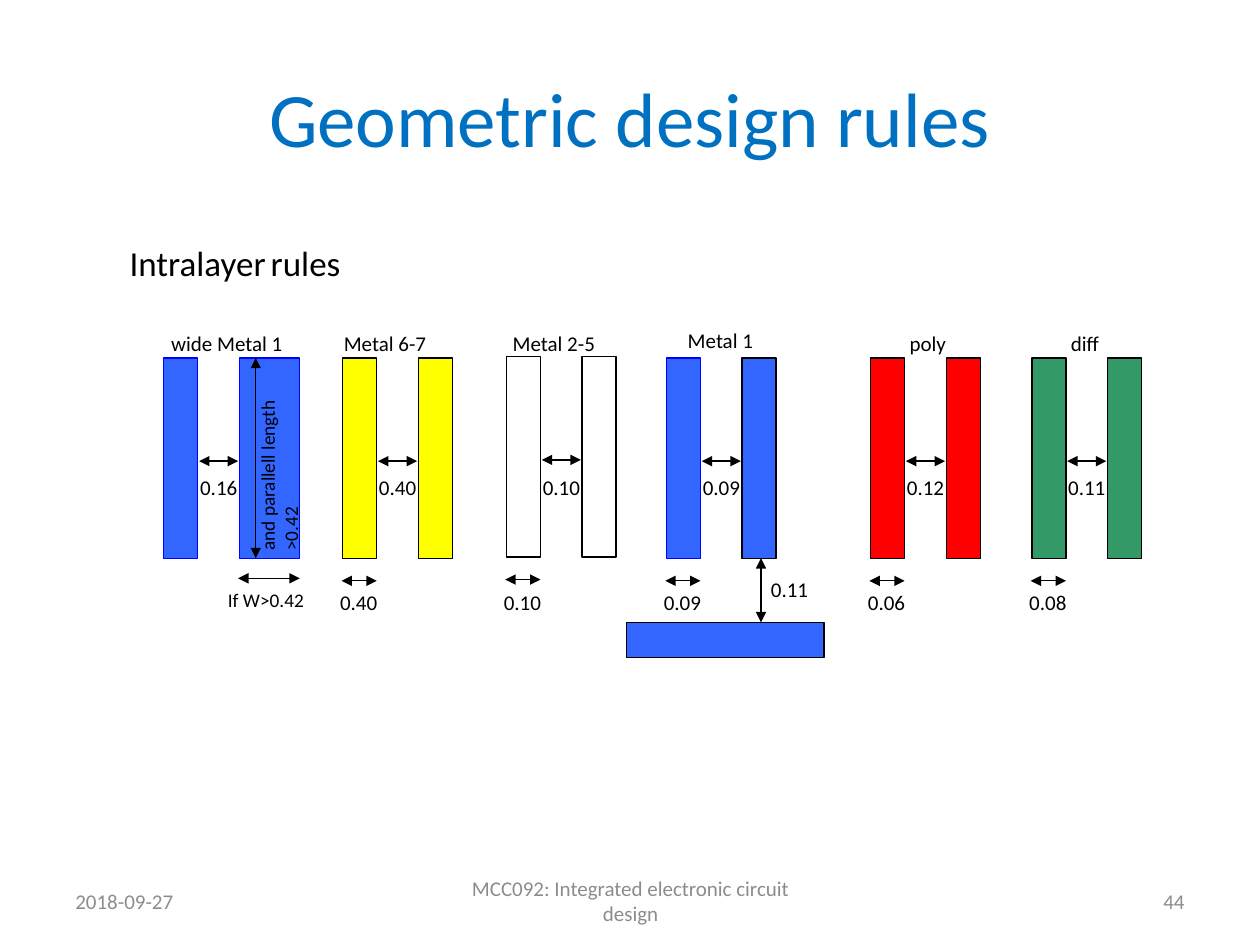
from dataclasses import dataclass

from lxml.etree import SubElement
from pptx import Presentation
from pptx.dml.color import RGBColor
from pptx.enum.shapes import MSO_CONNECTOR, MSO_SHAPE
from pptx.enum.text import MSO_ANCHOR, PP_ALIGN
from pptx.oxml.ns import qn
from pptx.util import Inches, Pt

COLORS = {
    "title": "0070C0",
    "footer": "8C8C8C",
    "black": "000000",
    "metal": "3366FF",
    "metal_edge": "0000FF",
    "yellow": "FFFF00",
    "white": "FFFFFF",
    "red": "FF0000",
    "green": "339966",
}
FONT = "Calibri"
BAR_WIDTH = 0.27
BAR_HEIGHT = 1.59
BAR_PITCH = 0.6


@dataclass
class Layer:
    """One mask layer with its spacing and width rules."""

    name: str
    left: float
    label_left: float
    fill: str
    spacing: str
    width: str = ""
    top: float = 2.84
    label_top: float = 2.57
    edges: tuple = ("black", "black")
    second_width: float = BAR_WIDTH


LAYERS = [
    Layer("wide Metal 1", 1.3, 1.26, "metal", "0.16",
          edges=("metal_edge", "metal_edge"), second_width=0.48),
    Layer("Metal 6-7", 2.72, 2.63, "yellow", "0.40", "0.40"),
    Layer("Metal 2-5", 4.02, 3.97, "white", "0.10", "0.10", top=2.83),
    Layer("Metal 1", 5.29, 5.36, "metal", "0.09", "0.09",
          label_top=2.55, edges=("metal_edge", "black")),
    Layer("poly", 6.91, 7.12, "red", "0.12", "0.06"),
    Layer("diff", 8.19, 8.4, "green", "0.11", "0.08"),
]


def rgb(name):
    """Return the named colour."""
    return RGBColor.from_string(COLORS[name])


def add_text(slide, box, text, size=12, color="black", align=PP_ALIGN.LEFT,
             anchor=MSO_ANCHOR.TOP):
    """Add one line of text in a box and return its shape."""
    shape = slide.shapes.add_textbox(*map(Inches, box))
    frame = shape.text_frame
    frame.word_wrap = True
    frame.vertical_anchor = anchor
    frame.text = text
    paragraph = frame.paragraphs[0]
    paragraph.alignment = align
    for run in paragraph.runs:
        run.font.name = FONT
        run.font.size = Pt(size)
        run.font.color.rgb = rgb(color)
    return shape


def add_bar(slide, box, fill, edge="black"):
    """Add an outlined rectangle of layer material."""
    shape = slide.shapes.add_shape(MSO_SHAPE.RECTANGLE, *map(Inches, box))
    shape.shadow.inherit = False
    shape.fill.solid()
    shape.fill.fore_color.rgb = rgb(fill)
    shape.line.color.rgb = rgb(edge)
    shape.line.width = Pt(0.75)


def add_dimension(slide, start, end):
    """Add a dimension line with an arrowhead at both ends."""
    connector = slide.shapes.add_connector(
        MSO_CONNECTOR.STRAIGHT, *map(Inches, (*start, *end)))
    connector.line.color.rgb = rgb("black")
    connector.line.width = Pt(0.75)
    line = connector.line._get_or_add_ln()
    for tag in ("a:headEnd", "a:tailEnd"):
        SubElement(line, qn(tag)).set("type", "triangle")
    SubElement(connector._element.spPr, qn("a:effectLst"))


def add_layer(slide, layer):
    """Draw two bars of a layer with its name, spacing and width."""
    left, top = layer.left, layer.top
    second = left + BAR_PITCH
    add_bar(slide, (left, top, BAR_WIDTH, BAR_HEIGHT), layer.fill, layer.edges[0])
    add_bar(slide, (second, top, layer.second_width, BAR_HEIGHT),
            layer.fill, layer.edges[1])
    add_text(slide, (layer.label_left, layer.label_top, 1.19, 0.32), layer.name)
    add_dimension(slide, (left + 0.28, top + 0.82), (second - 0.01, top + 0.82))
    add_text(slide, (left + 0.19, 3.72, 0.56, 0.32), layer.spacing)
    if layer.width:
        add_dimension(slide, (left - 0.01, top + 1.77),
                      (left + BAR_WIDTH, top + 1.77))
        add_text(slide, (left - 0.12, 4.63, 0.59, 0.32), layer.width)


def add_wide_condition(slide, left, top, width):
    """Mark the width and length limits on the wide bar."""
    add_dimension(slide, (left - 0.01, top + 1.75), (left + width, top + 1.75))
    add_text(slide, (left - 0.19, top + 1.78, 0.9, 0.32), "If W>0.42", 11)
    add_dimension(slide, (left + 0.13, top), (left + 0.13, top + BAR_HEIGHT))
    label = add_text(slide, (left + 0.08, top - 0.12, 0.42, 1.75),
                     "and parallell length >0.42", 11)
    label.text_frame._txBody.bodyPr.set("vert", "vert270")


def add_end_spacing(slide, left, top, width):
    """Draw the crossing bar and its distance to the bar ends above."""
    add_bar(slide, (left, top, width, 0.28), "metal")
    add_dimension(slide, (left + 1.07, top - 0.51), (left + 1.07, top))
    add_text(slide, (left + 1.05, top - 0.41, 0.59, 0.32), "0.11")


def add_heading(slide, left, top, width):
    """Add the title and the subheading."""
    add_text(slide, (left, top, width, 1.25), "Geometric design rules", 44,
             "title", PP_ALIGN.CENTER, MSO_ANCHOR.MIDDLE)
    subheading = add_text(slide, (left + 0.43, top + 1.57, 2.71, 0.4),
                          "Intralayer", 20)
    paragraph = subheading.text_frame.paragraphs[0]
    for text, size in ((" ", 12), ("rules", 20)):
        run = paragraph.add_run()
        run.text = text
        run.font.name = FONT
        run.font.size = Pt(size)
        run.font.color.rgb = rgb("black")


def add_footer(slide, top, height):
    """Add the date, course name and slide number."""
    for left, width, text, align in (
        (0.5, 2.33, "2018-09-27", PP_ALIGN.LEFT),
        (3.42, 3.17, "MCC092: Integrated electronic circuit design", PP_ALIGN.CENTER),
        (7.17, 2.33, "44", PP_ALIGN.RIGHT),
    ):
        add_text(slide, (left, top, width, height), text, 12, "footer",
                 align, MSO_ANCHOR.MIDDLE)


def main():
    """Build and save the slide."""
    presentation = Presentation()
    presentation.slide_width = Inches(10)
    presentation.slide_height = Inches(7.5)
    slide = presentation.slides.add_slide(presentation.slide_layouts[6])
    add_heading(slide, 0.5, 0.3, 9)
    for layer in LAYERS:
        add_layer(slide, layer)
    add_wide_condition(slide, 1.9, 2.84, 0.48)
    add_end_spacing(slide, 4.97, 4.94, 1.57)
    add_footer(slide, 6.95, 0.4)
    presentation.save("out.pptx")


if __name__ == "__main__":
    main()
